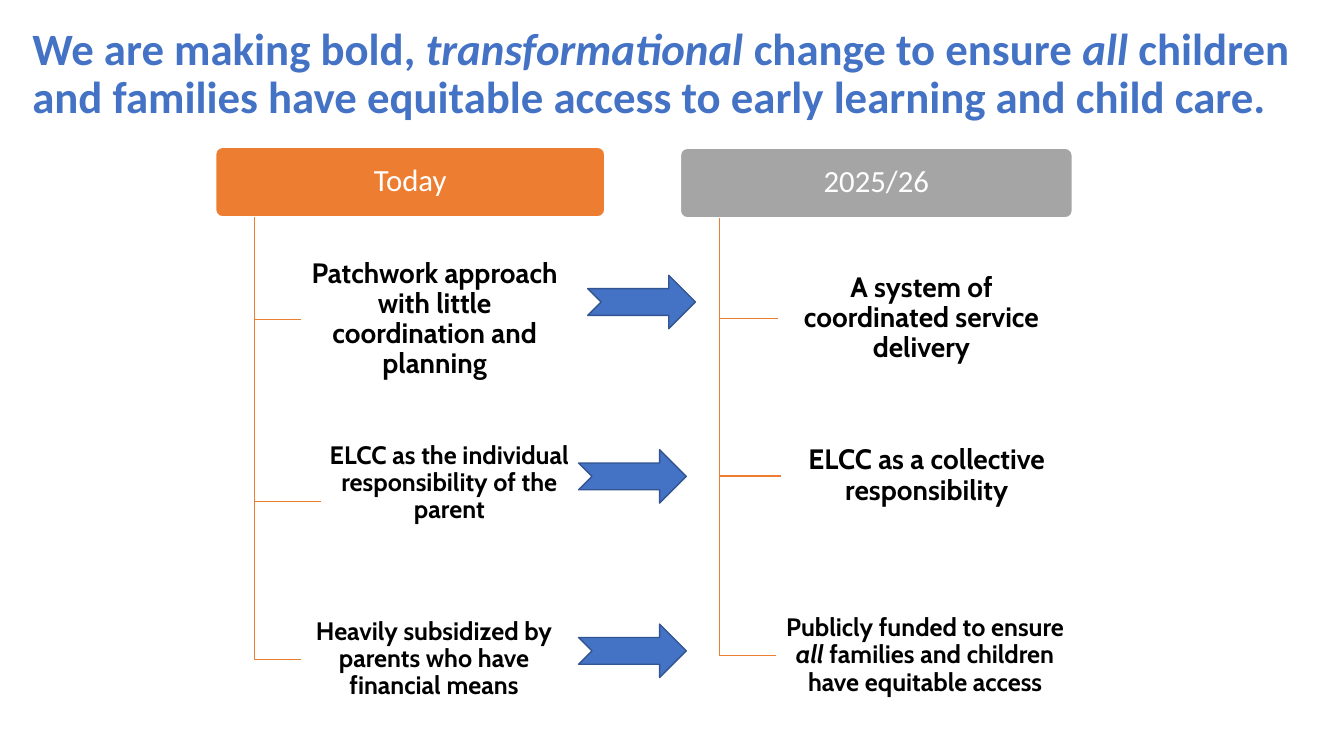
from dataclasses import dataclass

from lxml.etree import SubElement
from pptx import Presentation
from pptx.dml.color import RGBColor
from pptx.enum.shapes import MSO_SHAPE as Preset
from pptx.enum.text import MSO_ANCHOR as Anchor, PP_ALIGN as Align
from pptx.oxml.ns import qn
from pptx.util import Pt

BLUE, DARK_BLUE = "4472C4", "325491"
ORANGE, GRAY = "ED7D31", "A5A5A5"
WHITE, BLACK = "FFFFFF", "000000"
HEADER_HEIGHT = 49.7
ITEM_HEIGHT = 91.5
BRANCH_GAP = 3


@dataclass
class Item:
    runs: list
    left: float
    middle: float
    width: float
    size: int
    lift: float = 0


def color(hex_text):
    return RGBColor.from_string(hex_text)


def style_shape(shape, fill, line):
    shape.shadow.inherit = False
    if fill:
        shape.fill.solid()
        shape.fill.fore_color.rgb = color(fill)
    else:
        shape.fill.background()
    shape.line.color.rgb = color(line)
    shape.line.width = Pt(1)


def write_text(shape, runs, font, size, ink, bold=True, align=Align.CENTER, insets=(3, 2.2)):
    frame = shape.text_frame
    frame.word_wrap = True
    frame.vertical_anchor = Anchor.MIDDLE
    frame.margin_left = frame.margin_right = Pt(insets[0])
    frame.margin_top = frame.margin_bottom = Pt(insets[1])
    paragraph = frame.paragraphs[0]
    paragraph.alignment = align
    paragraph.line_spacing = 0.9
    for text, italic in runs:
        run = paragraph.add_run()
        run.text = text
        run.font.name = font
        run.font.size = Pt(size)
        run.font.bold = bold
        run.font.italic = italic
        run.font.color.rgb = color(ink)


def add_title(slide, left, top, width, height):
    title = slide.shapes.add_textbox(Pt(left), Pt(top), Pt(width), Pt(height))
    runs = [
        ("We are making bold, ", False),
        ("transformational ", True),
        ("change to ensure ", False),
        ("all", True),
        (" children and families have equitable access to early learning and child care.", False),
    ]
    write_text(title, runs, "Calibri", 32, BLUE, align=Align.LEFT, insets=(7.2, 3.6))


def add_branch(slide, left, top, right, bottom):
    builder = slide.shapes.build_freeform(Pt(left), Pt(top))
    builder.add_line_segments([(Pt(left), Pt(bottom)), (Pt(right), Pt(bottom))], close=False)
    style_shape(builder.convert_to_shape(), None, ORANGE)


def add_column(slide, left, top, width, heading, fill, items):
    header = slide.shapes.add_shape(
        Preset.ROUNDED_RECTANGLE, Pt(left), Pt(top), Pt(width), Pt(HEADER_HEIGHT))
    header.adjustments[0] = 0.1
    style_shape(header, fill, WHITE)
    write_text(header, [(heading, False)], "Calibri", 22, WHITE, bold=False)

    for item in items:
        item_left, middle = left + item.left, top + item.middle
        add_branch(slide, left + width / 10, top + HEADER_HEIGHT, item_left - BRANCH_GAP, middle)
        label = slide.shapes.add_textbox(
            Pt(item_left), Pt(middle - ITEM_HEIGHT / 2 - item.lift), Pt(item.width), Pt(ITEM_HEIGHT))
        write_text(label, item.runs, "Cabin", item.size, BLACK)


def add_arrows(slide, left, top, width, height, pitch):
    for row, shift in enumerate((6.5, 0, 0)):
        arrow = slide.shapes.add_shape(
            Preset.NOTCHED_RIGHT_ARROW, Pt(left + shift), Pt(top + row * pitch), Pt(width), Pt(height))
        style_shape(arrow, BLUE, DARK_BLUE)


def main():
    presentation = Presentation()
    presentation.slide_width, presentation.slide_height = Pt(960), Pt(540)
    slide = presentation.slides.add_slide(presentation.slide_layouts[6])

    today = [
        Item([("Patchwork approach with little coordination and planning", False)], 64, 123, 185, 20),
        Item([("ELCC as the individual responsibility of the parent", False)], 78.5, 253.2, 177, 18, 13),
        Item([("Heavily subsidized by parents who have financial means", False)], 64, 365.8, 184, 18),
    ]
    future = [
        Item([("A system of coordinated service delivery", False)], 72.7, 121.4, 199, 20),
        Item([("ELCC as a collective responsibility", False)], 75, 234, 202, 20),
        Item([("Publicly funded to ensure ", False), ("all", True),
              (" families and children have equitable access", False)], 71.3, 362.5, 207, 18),
    ]
    add_title(slide, 16, 26, 928, 55.5)
    add_column(slide, 154, 105.2, 278, "Today", ORANGE, today)
    add_column(slide, 486, 105.9, 280, "2025/26", GRAY, future)
    add_arrows(slide, 413.3, 196.6, 77, 38.2, 124.6)
    presentation.save("out.pptx")


if __name__ == "__main__":
    main()
